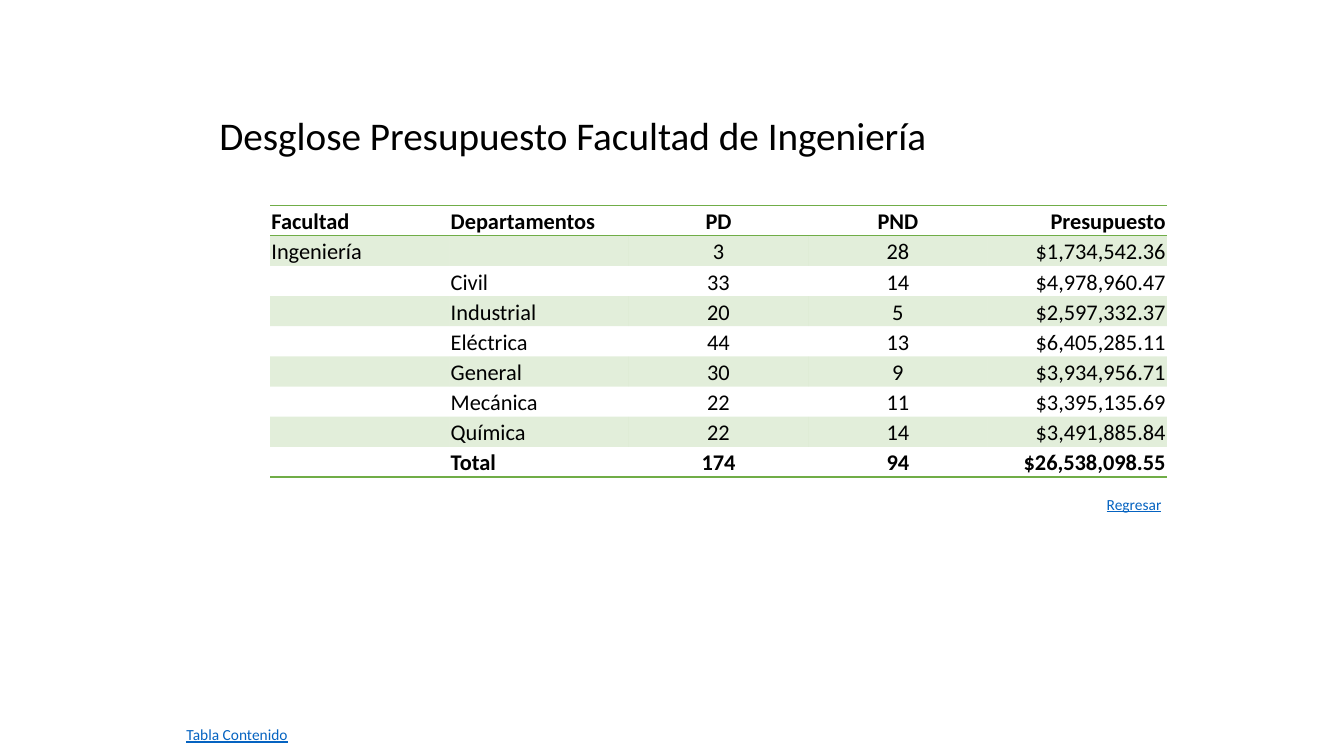
import lxml.etree
import pptx
import pptx.dml.color
import pptx.enum.text
import pptx.oxml.ns
import pptx.util

Cm = pptx.util.Cm
Pt = pptx.util.Pt
RGB = pptx.dml.color.RGBColor
ALIGN = pptx.enum.text.PP_ALIGN
qn = pptx.oxml.ns.qn


class Theme:
    font = "Calibri"
    text = "000000"
    link = "0563C1"
    green = "70AD47"
    band_alpha = 20
    title_size = 28
    table_size = 16
    link_size = 11
    border_width = 1


def write(tf, text, size, color=Theme.text, bold=False, underline=False, align=ALIGN.LEFT):
    p = tf.paragraphs[0]
    p.alignment = align
    if not text:
        # An empty cell needs its own type size to keep the row height
        p._p.get_or_add_endParaRPr().set("sz", str(size * 100))
        return
    r = p.add_run()
    r.text = text
    r.font.name = Theme.font
    r.font.size = Pt(size)
    r.font.bold = bold
    r.font.underline = underline
    r.font.color.rgb = RGB.from_string(color)


def add_border(cell, side):
    """Draw a green line on one side of a cell: lnT (top) or lnB (bottom)."""
    ln = lxml.etree.Element(qn(f"a:{side}"), w=str(Pt(Theme.border_width)))
    fill = lxml.etree.SubElement(ln, qn("a:solidFill"))
    lxml.etree.SubElement(fill, qn("a:srgbClr"), val=Theme.green)
    cell._tc.get_or_add_tcPr().insert(0, ln)


prs = pptx.Presentation()
prs.slide_width = Cm(33.87)
prs.slide_height = Cm(19.05)
s = prs.slides.add_slide(prs.slide_layouts[6])

# Budget table
rows = [
    ("Facultad", "Departamentos", "PD", "PND", "Presupuesto"),
    ("Ingeniería", "", "3", "28", "$1,734,542.36"),
    ("", "Civil", "33", "14", "$4,978,960.47"),
    ("", "Industrial", "20", "5", "$2,597,332.37"),
    ("", "Eléctrica", "44", "13", "$6,405,285.11"),
    ("", "General", "30", "9", "$3,934,956.71"),
    ("", "Mecánica", "22", "11", "$3,395,135.69"),
    ("", "Química", "22", "14", "$3,491,885.84"),
    ("", "Total", "174", "94", "$26,538,098.55"),
]
aligns = [ALIGN.LEFT, ALIGN.LEFT, ALIGN.CENTER, ALIGN.CENTER, ALIGN.RIGHT]
header, total = 0, len(rows) - 1
col_width, row_height = 4.52, 0.76

table = s.shapes.add_table(
    len(rows), len(aligns), Cm(6.81), Cm(5.18),
    Cm(col_width * len(aligns)), Cm(row_height * len(rows))).table
table.horz_banding = False
# "No Style, No Grid"
table._tbl.tblPr.find(qn("a:tableStyleId")).text = "{2D5ABB26-0587-4C30-8999-92F81FD0307C}"

for i, row in enumerate(rows):
    table.rows[i].height = Cm(row_height)
    for j, text in enumerate(row):
        cell = table.cell(i, j)
        cell.margin_left = cell.margin_right = cell.margin_top = Cm(0.03)
        cell.margin_bottom = 0
        cell.vertical_anchor = pptx.enum.text.MSO_ANCHOR.BOTTOM
        write(cell.text_frame, text, Theme.table_size,
              bold=i in (header, total), align=aligns[j])
        if i % 2:
            cell.fill.solid()
            cell.fill.fore_color.rgb = RGB.from_string(Theme.green)
            color = cell._tc.tcPr.find(".//" + qn("a:srgbClr"))
            lxml.etree.SubElement(color, qn("a:alpha"), val=str(Theme.band_alpha * 1000))
        else:
            cell.fill.background()
        if i in (header, total):
            add_border(cell, "lnB")
        if i == header:
            add_border(cell, "lnT")

# Title and navigation labels
link = dict(size=Theme.link_size, color=Theme.link, underline=True)
labels = [
    ("Desglose Presupuesto Facultad de Ingeniería", 5.28, 2.69, 18.52, 1.45,
     dict(size=Theme.title_size)),
    ("Regresar", 27.64, 12.34, 1.9, 0.74, link),
    ("Tabla Contenido", 4.45, 18.14, 3.1, 0.74, link),
]
for text, left, top, width, height, style in labels:
    tf = s.shapes.add_textbox(Cm(left), Cm(top), Cm(width), Cm(height)).text_frame
    tf.word_wrap = False
    tf.auto_size = pptx.enum.text.MSO_AUTO_SIZE.SHAPE_TO_FIT_TEXT
    write(tf, text, **style)

prs.save("out.pptx")
